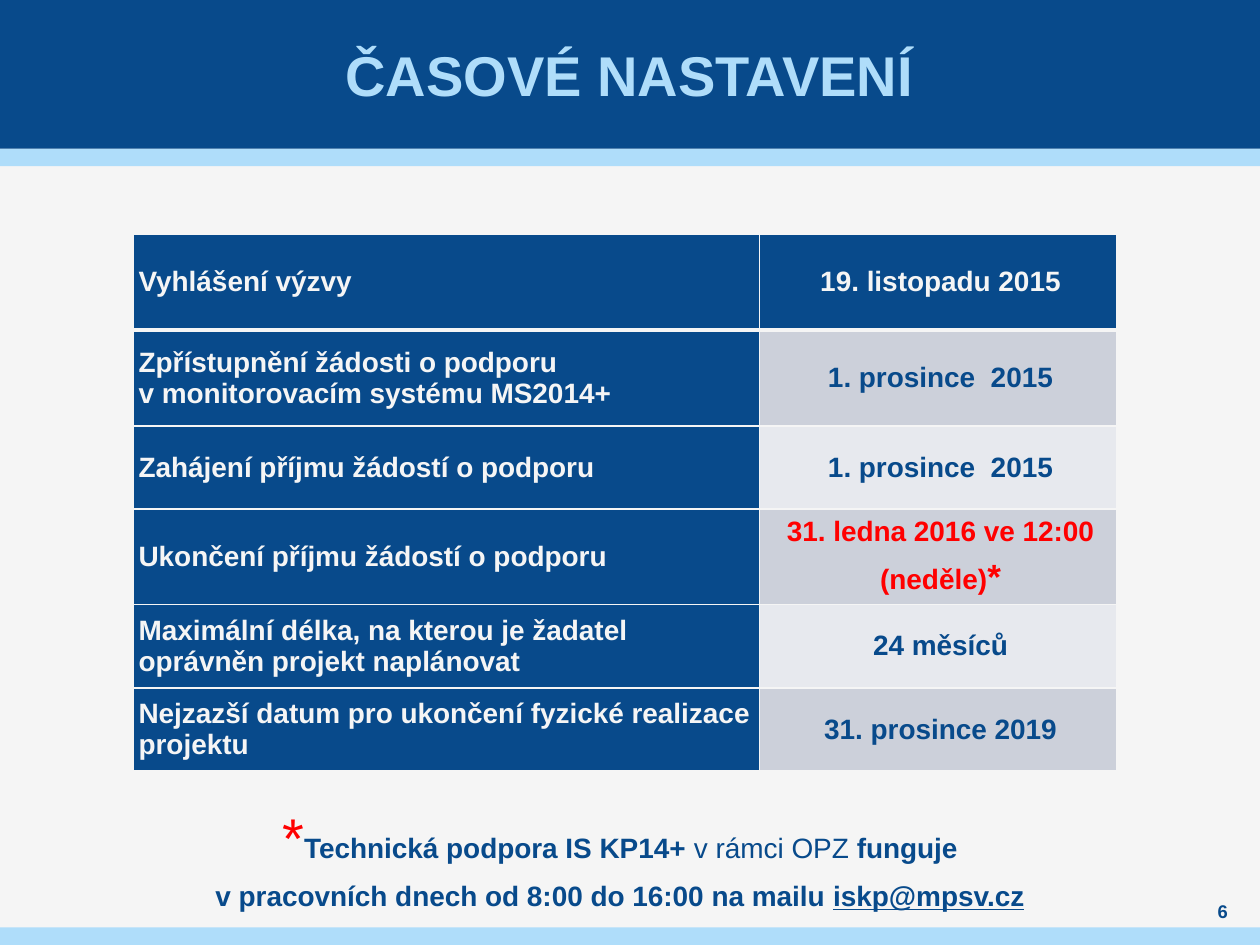
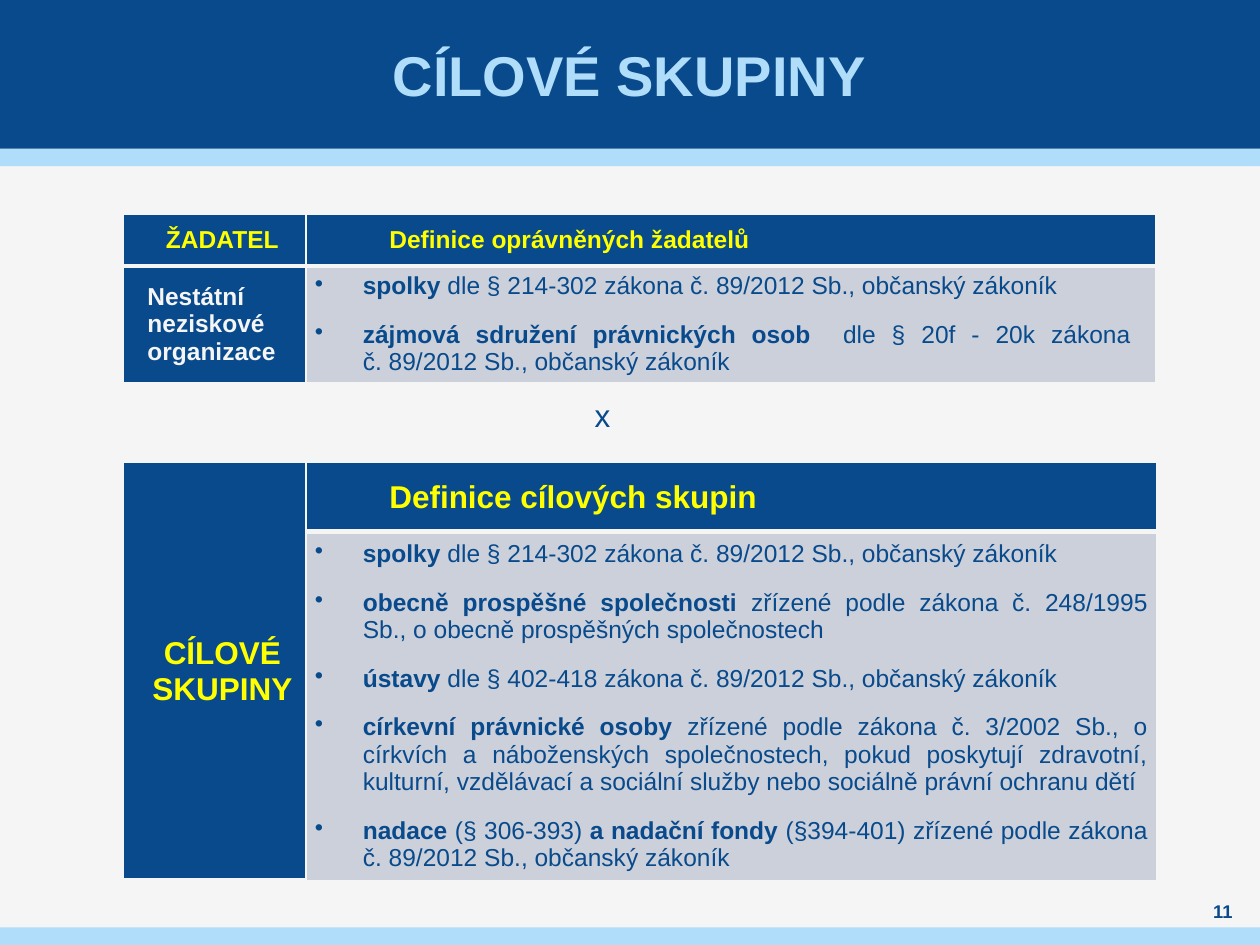
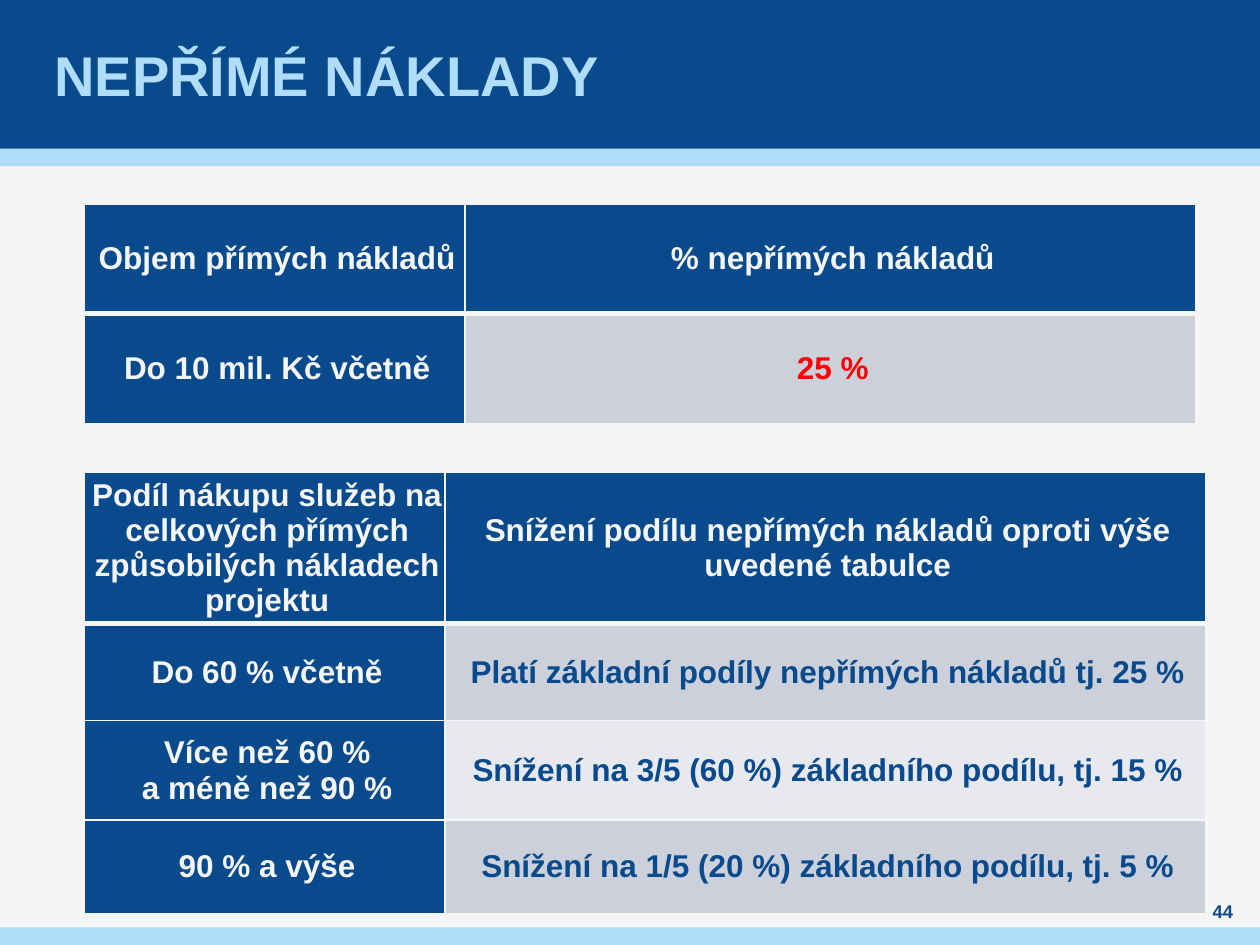
from copy import deepcopy

from lxml import etree
from pptx import Presentation
from pptx import util as u
from pptx.dml.color import RGBColor
from pptx.enum import shapes, text
from pptx.oxml import ns

NAVY = RGBColor(0x08, 0x4A, 0x8B)
SKY = RGBColor(0xAF, 0xDD, 0xFA)
PALE = RGBColor(0xF5, 0xF5, 0xF5)
GREY = RGBColor(0xCC, 0xD0, 0xDA)
LIGHT = RGBColor(0xE7, 0xE9, 0xEE)
RED = RGBColor(0xFF, 0x00, 0x00)
YELLOW = RGBColor(0xFF, 0xFF, 0x00)

LEFT = text.PP_ALIGN.LEFT
MID = text.PP_ALIGN.CENTER
FULL = text.PP_ALIGN.JUSTIFY
PLAIN = dict(bold=False)
BANDS = [(0, 1.18, NAVY), (1.18, 0.14, SKY), (7.36, 0.14, SKY)]
EDGES = ("a:lnL", "a:lnR", "a:lnT", "a:lnB")


def put(frame, paras, align=LEFT, left=0, hang=0, gap=0, bullet=None, **font):
    """Fill a frame; a paragraph is a string or a list of strings and (string, format) runs."""
    frame.word_wrap = True
    for i, runs in enumerate([paras] if isinstance(paras, str) else paras):
        para = frame.add_paragraph() if i else frame.paragraphs[0]
        para.alignment = align
        if i and gap:
            para.space_before = u.Pt(gap)
        props = para._p.get_or_add_pPr()
        props.set("marL", str(u.Inches(left)))
        props.set("indent", str(u.Inches(-hang)))
        if bullet:
            etree.SubElement(props, ns.qn("a:buChar"), char=bullet)
        for run in [runs] if isinstance(runs, str) else runs:
            words, own = (run, {}) if isinstance(run, str) else run
            write(para, words, **{**font, **own})


def write(para, words, size=16, color=NAVY, bold=True, under=False):
    for i, line in enumerate(words.split("\n")):
        if i:
            para.add_line_break()
            para._p[-1].append(deepcopy(run._r.rPr))
        run = para.add_run()
        run.text = line
        font = run.font
        font.name, font.size, font.bold = "Arial", u.Pt(size), bold
        font.color.rgb = color
        if under:
            font.underline = True


def inset(frame, side=0, top=0):
    frame.margin_left = frame.margin_right = u.Inches(side)
    frame.margin_top = frame.margin_bottom = u.Inches(top)


def edge(cell, widths):
    """Draw the left, right, top and bottom borders of a cell."""
    props = cell._tc.get_or_add_tcPr()
    for i, (tag, width) in enumerate(zip(EDGES, widths)):
        line = etree.Element(ns.qn(tag), w=str(u.Pt(width)))
        fill = etree.SubElement(line, ns.qn("a:solidFill"))
        etree.SubElement(fill, ns.qn("a:srgbClr"), val=str(PALE))
        props.insert(i, line)


class Deck:
    def __init__(self):
        self.pres = Presentation()
        self.pres.slide_width = u.Inches(10)
        self.pres.slide_height = u.Inches(7.5)
        self.slide = None

    def base(self):
        """Give the master its background and bands."""
        master = self.pres.slide_master
        master.background.fill.solid()
        master.background.fill.fore_color.rgb = PALE
        for top, high, color in BANDS:
            band = self.slide.shapes.add_shape(
                shapes.MSO_SHAPE.RECTANGLE, 0, u.Inches(top), u.Inches(10), u.Inches(high))
            band.shadow.inherit = False
            band.fill.solid()
            band.fill.fore_color.rgb = color
            band.line.fill.background()
            master.shapes.element.insert(2, band.element)

    def page(self, title, number, align=MID):
        first = self.slide is None
        self.slide = self.pres.slides.add_slide(self.pres.slide_layouts[5])
        if first:
            self.base()
        head = self.slide.shapes.title
        head.left, head.top = u.Inches(0.39), 0
        head.width, head.height = u.Inches(9.21), u.Inches(1.18)
        frame = head.text_frame
        frame.auto_size = text.MSO_AUTO_SIZE.NONE
        frame.vertical_anchor = text.MSO_ANCHOR.MIDDLE
        inset(frame, 0.04)
        put(frame, title, align, size=32, color=SKY)
        note = self.label((9.45, 7.13, 0.51, 0.2), number, align=MID, size=10.5)
        note.vertical_anchor = text.MSO_ANCHOR.MIDDLE

    def label(self, at, paras, side=0, top=0, **fmt):
        frame = self.slide.shapes.add_textbox(*map(u.Inches, at)).text_frame
        inset(frame, side, top)
        put(frame, paras, **fmt)
        return frame

    def table(self, x, y, cols, rows, cells, looks, heads=({}, {}), side=0, **fmt):
        """Looks format the columns; heads change them in the first row."""
        grid = self.slide.shapes.add_table(
            len(rows), len(cols), u.Inches(x), u.Inches(y),
            u.Inches(sum(cols)), u.Inches(sum(rows))).table
        grid.first_row = grid.horz_banding = False
        for col, width in zip(grid.columns, cols):
            col.width = u.Inches(width)
        for row, high in zip(grid.rows, rows):
            row.height = u.Inches(high)
        for r, line in enumerate(cells):
            for c, paras in enumerate(line):
                cell = grid.cell(r, c)
                dark = r == 0 or c == 0
                cell.fill.solid()
                cell.fill.fore_color.rgb = NAVY if dark else GREY if r % 2 else LIGHT
                edge(cell, (1, 1, 3 if r == 1 else 1, 3 if r == 0 else 1))
                inset(cell, side)
                cell.vertical_anchor = text.MSO_ANCHOR.MIDDLE
                look = {"color": PALE if dark else NAVY, **fmt, **looks[c]}
                if r == 0:
                    look.update(heads[c])
                if paras:
                    put(cell.text_frame, paras, **look)
        return grid


def dates(deck):
    deck.page("ČASOVÉ NASTAVENÍ", "6")
    cells = [
        ("Vyhlášení výzvy", "19. listopadu 2015"),
        ("Zpřístupnění žádosti o podporu\nv monitorovacím systému MS2014+", "1. prosince  2015"),
        ("Zahájení příjmu žádostí o podporu", "1. prosince  2015"),
        ("Ukončení příjmu žádostí o podporu",
         [[("31. ledna 2016 ve 12:00", dict(color=RED))],
          [("(neděle)", dict(color=RED)), ("*", dict(color=RED, size=20))]]),
        ("Maximální délka, na kterou je žadatel oprávněn projekt naplánovat", "24 měsíců"),
        ("Nejzazší datum pro ukončení fyzické realizace projektu", "31. prosince 2019"),
    ]
    deck.table(1.06, 1.86, [4.97, 2.83], [0.76, 0.76, 0.66, 0.76, 0.66, 0.66], cells,
               [{}, dict(align=MID)], left=0.04, gap=6)
    deck.label((0.83, 6.37, 8.18, 0.94), [
        [("*", dict(size=32, color=RED, bold=False)), "Technická podpora IS KP14+ ",
         ("v rámci OPZ ", PLAIN), "funguje"],
        ["v pracovních dnech od 8:00 do 16:00 na mailu ", ("iskp@mpsv.cz", dict(under=True))],
    ], align=MID, gap=5)


def groups(deck):
    deck.page("CÍLOVÉ SKUPINY", "11")
    items = dict(align=FULL, left=0.38, hang=0.38, gap=12, bullet="•", size=14)
    name = dict(align=MID, color=YELLOW)
    head = dict(align=LEFT, left=0.59, hang=0, bullet=None, color=YELLOW)
    clubs = ["spolky", (" dle § 214-302 zákona č. 89/2012 Sb., občanský zákoník", PLAIN)]
    deck.table(0.98, 1.7, [1.45, 6.74], [0.41, 0.93], [
        ("ŽADATEL", "Definice oprávněných žadatelů"),
        ("Nestátní neziskové organizace", [
            clubs,
            ["zájmová sdružení právnických osob  ",
             ("dle § 20f - 20k zákona \nč. 89/2012 Sb., občanský zákoník", PLAIN)],
        ]),
    ], [dict(left=0.12, size=14), items], [name, head], side=0.07)
    deck.label((4.62, 3.09, 1.18, 0.4), "x", side=0.1, top=0.05, size=18, bold=False)
    grid = deck.table(0.98, 3.67, [1.45, 6.75], [0.55, 2.63], [
        (["CÍLOVÉ", "SKUPINY"], "Definice cílových skupin"),
        (None, [
            clubs,
            ["obecně prospěšné společnosti ",
             ("zřízené podle zákona č. 248/1995 Sb., o obecně prospěšných společnostech", PLAIN)],
            ["ústavy", (" dle § 402-418 zákona č. 89/2012 Sb., občanský zákoník", PLAIN)],
            ["církevní právnické osoby ",
             ("zřízené podle zákona č. 3/2002 Sb., o církvích a náboženských společnostech, "
              "pokud poskytují zdravotní, kulturní, vzdělávací a sociální služby "
              "nebo sociálně právní ochranu dětí", PLAIN)],
            ["nadace", (" (§ 306-393) ", PLAIN), "a nadační fondy ",
             ("(§394-401) zřízené podle zákona č. 89/2012 Sb., občanský zákoník", PLAIN)],
        ]),
    ], [dict(left=0.12, size=18), items], [name, {**head, "size": 18}], side=0.07)
    grid.cell(0, 0).merge(grid.cell(1, 0))


def costs(deck):
    deck.page("NEPŘÍMÉ NÁKLADY", "44", LEFT)
    looks = [dict(align=MID, left=0.04, size=18)] * 2
    deck.table(0.67, 1.62, [3.02, 5.8], [0.87, 0.87], [
        ("Objem přímých nákladů", "% nepřímých nákladů"),
        ("Do 10 mil. Kč včetně", [[("25 %", dict(color=RED))]]),
    ], looks)
    deck.table(0.67, 3.75, [2.86, 6.04], [1.2, 0.77, 0.79, 0.74], [
        ("Podíl nákupu služeb na celkových přímých způsobilých nákladech projektu",
         "Snížení podílu nepřímých nákladů oproti výše uvedené tabulce"),
        ("Do 60 % včetně", "Platí základní podíly nepřímých nákladů tj. 25 %"),
        ("Více než 60 %\na méně než 90 %", "Snížení na 3/5 (60 %) základního podílu, tj. 15 %"),
        ("90 % a výše", "Snížení na 1/5 (20 %) základního podílu, tj. 5 %"),
    ], looks)


def main():
    deck = Deck()
    for build in (dates, groups, costs):
        build(deck)
    deck.pres.save("out.pptx")


if __name__ == "__main__":
    main()
